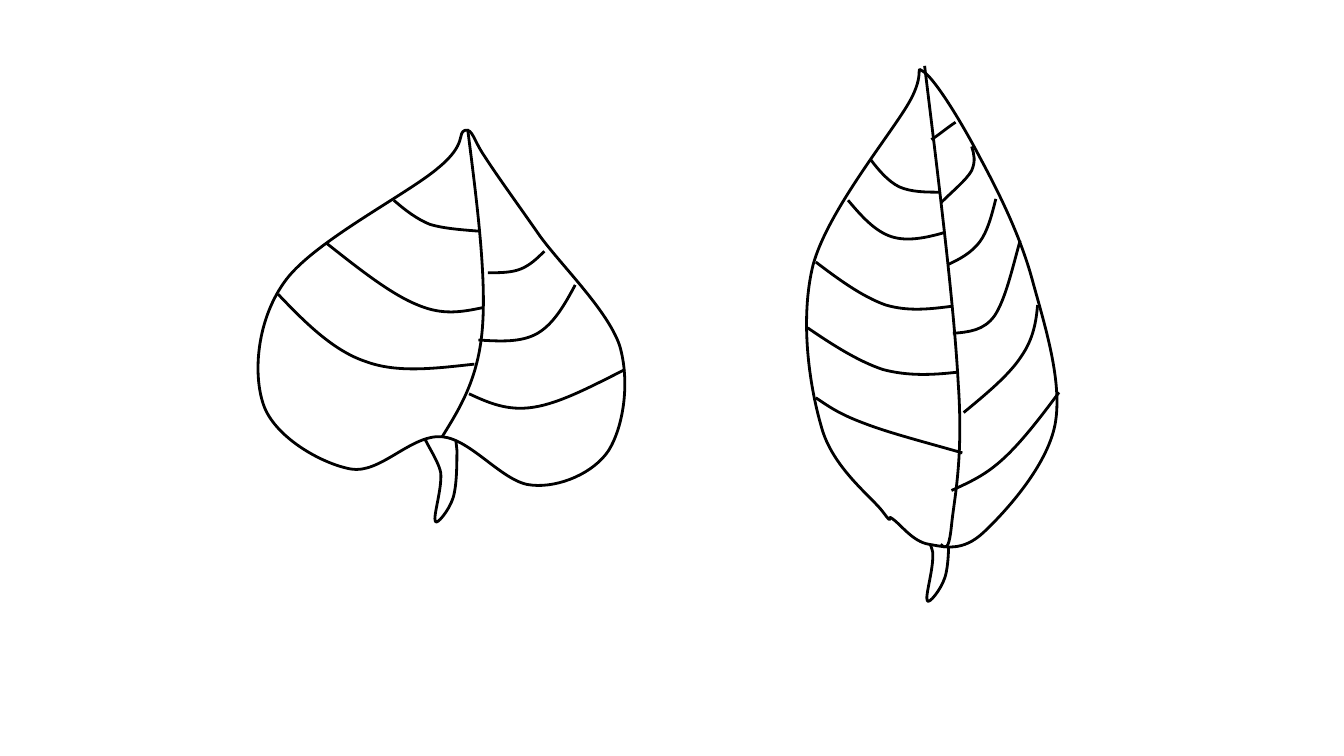
"""Draw two outlined leaves with stems and curved veins."""
from dataclasses import dataclass

from lxml.etree import SubElement
from pptx import Presentation
from pptx.dml.color import RGBColor
from pptx.oxml.ns import qn
from pptx.shapes.autoshape import Shape
from pptx.slide import Slide
from pptx.util import Pt

INK = RGBColor(0, 0, 0)
PAPER = RGBColor(255, 255, 255)
GRID = 0.72
SAMPLES = 24

Point = tuple[int, int]


@dataclass(frozen=True)
class Curve:
    """Chain of cubic segments: a start, then two controls and an end for each."""
    points: list[Point]
    closed: bool = False

    def shifted(self, right: int, down: int) -> "Curve":
        """Return the same curve moved by whole grid steps."""
        return Curve([(x + right, y + down) for x, y in self.points], self.closed)


@dataclass(frozen=True)
class Leaf:
    """A leaf as its stem, outline and veins, measured in grid steps."""
    stem: Curve
    outline: Curve
    veins: list[Curve]


STEM = Curve([
    (314, 319), (313, 325), (326, 341), (328, 352), (329, 364), (322, 385), (324, 388),
    (325, 391), (334, 380), (337, 371), (340, 362), (340, 345), (340, 335),
    (339, 325), (338, 314), (334, 312), (331, 310), (315, 312), (314, 319),
], closed=True)

HEART_LEAF = Leaf(
    STEM,
    Curve([
        (329, 325), (306, 323), (283, 353), (261, 349), (239, 345), (204, 325), (196, 301),
        (188, 278), (191, 237), (213, 208), (235, 179), (304, 144), (326, 125),
        (348, 107), (340, 99), (346, 97), (352, 96), (352, 104), (361, 117),
        (370, 131), (386, 153), (402, 176), (419, 199), (452, 231), (461, 257),
        (469, 284), (464, 317), (453, 335), (442, 352), (416, 363), (396, 361),
        (375, 360), (351, 327), (329, 325),
    ], closed=True),
    [
        Curve([(329, 325), (342, 304), (356, 282), (359, 244), (362, 206), (355, 151), (348, 96)]),
        Curve([(349, 293), (364, 300), (378, 306), (397, 303), (417, 300), (441, 287), (465, 275)]),
        Curve([(353, 271), (325, 274), (296, 278), (272, 269), (248, 261), (227, 240), (207, 219)]),
        Curve([(356, 253), (372, 254), (388, 255), (400, 248), (412, 241), (420, 227), (428, 212)]),
        Curve([(359, 229), (344, 232), (330, 235), (311, 227), (291, 219), (267, 200), (243, 181)]),
        Curve([(363, 203), (372, 203), (381, 203), (388, 200), (395, 197), (400, 192), (405, 187)]),
        Curve([(356, 172), (343, 171), (330, 170), (320, 167), (310, 163), (301, 156), (293, 149)]),
    ],
)

OVAL_LEAF = Leaf(
    STEM.shifted(366, 59),
    Curve([
        (664, 386), (659, 382), (666, 393), (657, 381), (649, 370), (619, 348), (611, 317),
        (602, 286), (595, 237), (605, 197), (616, 157), (662, 101), (676, 77),
        (690, 53), (679, 48), (688, 54), (697, 61), (716, 92), (729, 117),
        (743, 143), (759, 175), (768, 208), (777, 241), (791, 284), (785, 316),
        (779, 347), (748, 381), (732, 396), (716, 411), (703, 407), (691, 405),
        (679, 403), (670, 390), (664, 386),
    ], closed=True),
    [
        Curve([(700, 405), (703, 408), (706, 411), (708, 391), (710, 371), (717, 342), (713, 285),
               (710, 228), (699, 139), (688, 49)]),
        Curve([(708, 365), (721, 359), (733, 354), (747, 341), (760, 329), (774, 311), (788, 292)]),
        Curve([(716, 337), (688, 329), (661, 322), (643, 315), (624, 308), (616, 302), (607, 296)]),
        Curve([(717, 307), (734, 293), (751, 279), (760, 265), (769, 252), (771, 239), (772, 227)]),
        Curve([(712, 277), (694, 279), (676, 280), (657, 275), (639, 269), (620, 257), (601, 244)]),
        Curve([(709, 248), (721, 247), (732, 246), (740, 235), (748, 223), (753, 201), (759, 179)]),
        Curve([(708, 228), (692, 230), (676, 232), (659, 227), (642, 221), (624, 208), (607, 195)]),
        Curve([(705, 197), (714, 193), (723, 188), (729, 180), (735, 172), (738, 160), (741, 148)]),
        Curve([(703, 173), (689, 177), (675, 180), (663, 176), (651, 172), (641, 161), (631, 149)]),
        Curve([(700, 151), (709, 142), (719, 134), (723, 127), (726, 120), (725, 115), (723, 109)]),
        Curve([(700, 143), (689, 143), (678, 143), (669, 139), (661, 135), (654, 127), (648, 119)]),
        Curve([(693, 104), (699, 100), (705, 95), (711, 91)]),
    ],
)


def bezier(values: list[int], t: float) -> float:
    """Evaluate one coordinate of a cubic segment."""
    a, b, c, d = values
    s = 1 - t
    return a * s**3 + 3 * b * s * s * t + 3 * c * s * t * t + d * t**3


def draw_curve(slide: Slide, curve: Curve) -> Shape:
    """Add a freeform sized to the true extent of the curve and made of cubic segments."""
    points = [(Pt(GRID * x), Pt(GRID * y)) for x, y in curve.points]
    sampled = [
        tuple(round(bezier(axis, step / SAMPLES)) for axis in zip(*points[i:i + 4]))
        for i in range(0, len(points) - 1, 3)
        for step in range(1, SAMPLES + 1)
    ]
    builder = slide.shapes.build_freeform(*points[0])
    builder.add_line_segments(sampled, close=curve.closed)
    shape = builder.convert_to_shape()

    path = shape.element.find(".//" + qn("a:path"))
    for segment in list(path)[1:]:
        path.remove(segment)
    for i in range(1, len(points), 3):
        segment = SubElement(path, qn("a:cubicBezTo"))
        for x, y in points[i:i + 3]:
            SubElement(segment, qn("a:pt"), x=str(x - shape.left), y=str(y - shape.top))
    if curve.closed:
        SubElement(path, qn("a:close"))
        shape.fill.solid()
        shape.fill.fore_color.rgb = PAPER
    else:
        shape.fill.background()
    shape.line.color.rgb = INK
    shape.line.width = Pt(1.5)
    shape.shadow.inherit = False
    return shape


def draw_leaf(slide: Slide, leaf: Leaf) -> None:
    """Draw the stem behind the outline, and the veins on top."""
    for curve in (leaf.stem, leaf.outline, *leaf.veins):
        draw_curve(slide, curve)


def main() -> None:
    """Build and save the presentation."""
    presentation = Presentation()
    presentation.slide_width = Pt(720)
    presentation.slide_height = Pt(405)
    slide = presentation.slides.add_slide(presentation.slide_layouts[6])
    slide.background.fill.solid()
    slide.background.fill.fore_color.rgb = PAPER
    for leaf in (HEART_LEAF, OVAL_LEAF):
        draw_leaf(slide, leaf)
    presentation.save("out.pptx")


if __name__ == "__main__":
    main()
